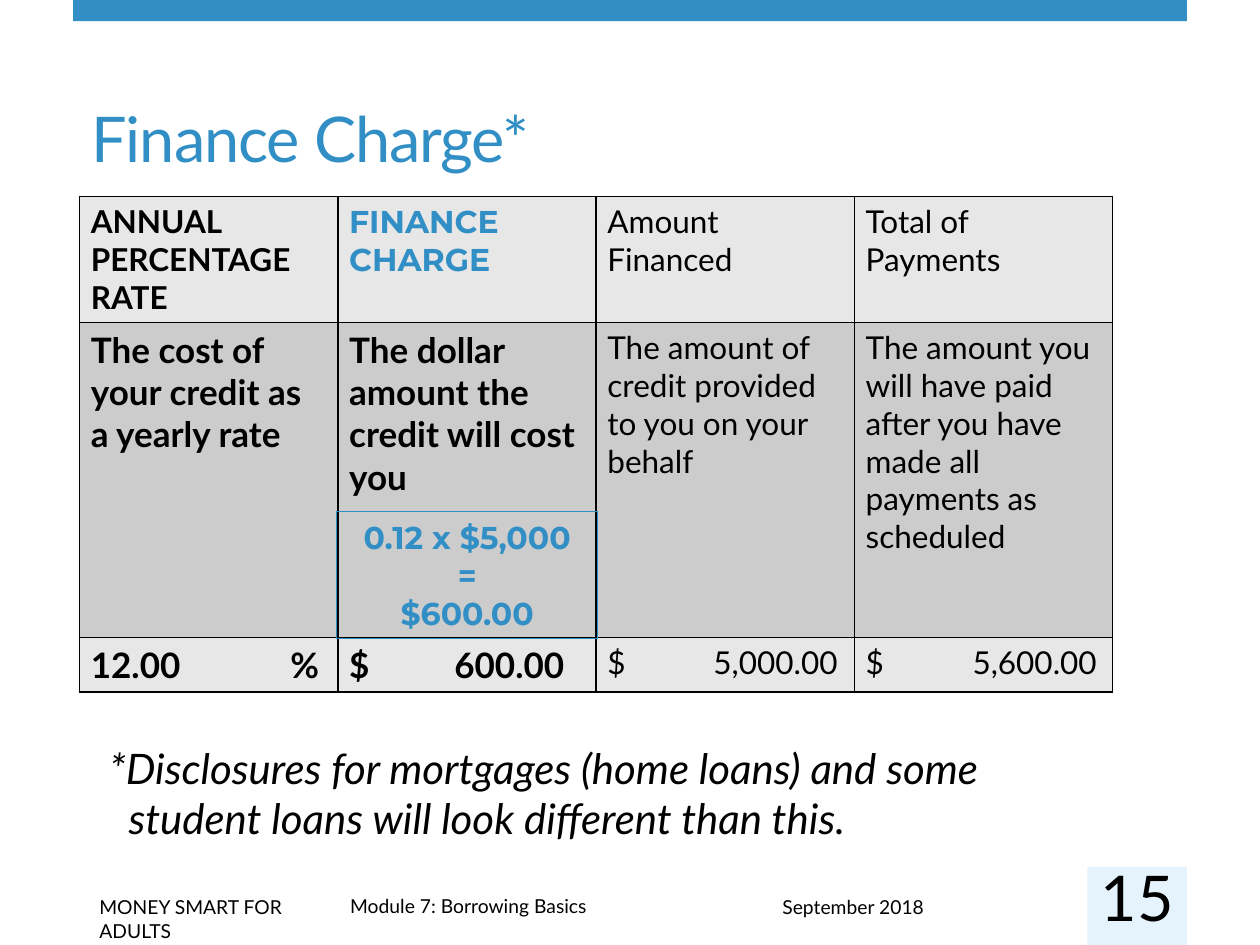
from lxml.etree import SubElement
from pptx import Presentation
from pptx.dml.color import RGBColor
from pptx.enum.shapes import MSO_SHAPE as Shape
from pptx.enum.text import MSO_ANCHOR as Anchor, PP_ALIGN as Align
from pptx.oxml.ns import qn
from pptx.util import Pt

COLORS = {
    "blue": "318FC5",
    "pale_blue": "E4F3FC",
    "black": "000000",
    "light_gray": "E7E7E7",
    "mid_gray": "CCCCCC",
}
BODY, ACCENT = "Lato", "Montserrat"
TITLE_ONLY = 5
COLUMN_WIDTH = 147.6
ROW_HEIGHTS = (72, 180, 31)
ROW_FILLS = ("light_gray", "mid_gray", "light_gray")

PLAIN = {"size": 18}
STRONG = {"size": 20, "bold": True}
HEADING = {"size": 18, "bold": True}
HIGHLIGHT = {"size": 18, "bold": True, "face": ACCENT, "color": "blue"}

DISCLOSURE = (
    (
        (["ANNUAL", "PERCENTAGE RATE"], HEADING),
        (["FINANCE\nCHARGE"], HIGHLIGHT),
        (["Amount\nFinanced"], PLAIN),
        (["Total of\nPayments"], PLAIN),
    ),
    (
        (["The cost of your credit as a yearly rate"], STRONG),
        (["The dollar amount the credit will cost you"], STRONG),
        (["The amount of credit provided to you on your behalf"], PLAIN),
        (["The amount you will have paid after you have made all payments as scheduled"], PLAIN),
    ),
    (
        (["12.00\t%"], STRONG),
        (["$\t600.00"], STRONG),
        (["$\t5,000.00"], PLAIN),
        (["$\t5,600.00"], PLAIN),
    ),
)
AMOUNT_TABS = (130.5, 123, 131.5, 132)

FOOTERS = (
    ("Module 7: Borrowing Basics", 193, 507.6, 407.5),
    ("MONEY SMART FOR ADULTS", 49.7, 508.3, 150.5),
    ("September 2018", 440, 508.3, 181.4),
)


def rgb(name):
    return RGBColor.from_string(COLORS[name])


def write(paragraph, text, size, bold=False, italic=False, face=BODY, color="black"):
    for index, line in enumerate(text.split("\n")):
        if index:
            paragraph.add_line_break()
        run = paragraph.add_run()
        run.text = line
        run.font.size = Pt(size)
        run.font.bold = bold
        run.font.italic = italic
        run.font.name = face
        run.font.color.rgb = rgb(color)


def add_text(slide, text, left, top, width, height, **style):
    box = slide.shapes.add_textbox(Pt(left), Pt(top), Pt(width), Pt(height))
    box.text_frame.word_wrap = True
    write(box.text_frame.paragraphs[0], text, **style)
    return box.text_frame


def add_rectangle(slide, left, top, width, height, fill=None, line=None):
    rectangle = slide.shapes.add_shape(
        Shape.RECTANGLE, Pt(left), Pt(top), Pt(width), Pt(height))
    rectangle.shadow.inherit = False
    if fill:
        rectangle.fill.solid()
        rectangle.fill.fore_color.rgb = rgb(fill)
    else:
        rectangle.fill.background()
    if line:
        rectangle.line.color.rgb = rgb(line)
        rectangle.line.width = Pt(0.75)
    else:
        rectangle.line.fill.background()
    return rectangle


def add_title(slide, text):
    title = slide.shapes.title
    title.left, title.top, title.width, title.height = Pt(45), Pt(34.6), Pt(590.4), Pt(69)
    title.text_frame.vertical_anchor = Anchor.BOTTOM
    paragraph = title.text_frame.paragraphs[0]
    paragraph.alignment = Align.LEFT
    write(paragraph, text, size=36, color="blue")
    paragraph.runs[0].font._element.set("spc", "-60")


def add_right_tab(paragraph, position):
    tabs = SubElement(paragraph._p.get_or_add_pPr(), qn("a:tabLst"))
    SubElement(tabs, qn("a:tab"), pos=str(Pt(position)), algn="r")


def set_borders(cell):
    properties = cell._tc.get_or_add_tcPr()
    for side in ("lnL", "lnR", "lnT", "lnB"):
        border = SubElement(properties, qn(f"a:{side}"), w=str(Pt(1)))
        fill = SubElement(border, qn("a:solidFill"))
        SubElement(fill, qn("a:srgbClr"), val=COLORS["black"])


def fill_cell(cell, paragraphs, style, fill, tab):
    cell.margin_left = cell.margin_right = Pt(6.5)
    cell.margin_top = cell.margin_bottom = Pt(3.6)
    set_borders(cell)
    cell.fill.solid()
    cell.fill.fore_color.rgb = rgb(fill)
    frame = cell.text_frame
    for index, text in enumerate(paragraphs):
        paragraph = frame.add_paragraph() if index else frame.paragraphs[0]
        if "\t" in text:
            add_right_tab(paragraph, tab)
        write(paragraph, text, **style)


def add_disclosure_table(slide):
    columns = len(AMOUNT_TABS)
    table = slide.shapes.add_table(
        len(DISCLOSURE), columns, Pt(45.4), Pt(112.2),
        Pt(COLUMN_WIDTH * columns), Pt(sum(ROW_HEIGHTS))).table
    table.first_row = table.horz_banding = False
    for column in table.columns:
        column.width = Pt(COLUMN_WIDTH)
    for r, row in enumerate(DISCLOSURE):
        table.rows[r].height = Pt(ROW_HEIGHTS[r])
        for c, (paragraphs, style) in enumerate(row):
            fill_cell(table.cell(r, c), paragraphs, style, ROW_FILLS[r], AMOUNT_TABS[c])


def add_calculation(slide):
    calculation = add_rectangle(slide, 192.5, 292.3, 149, 72.7, line="blue")
    calculation.text_frame.word_wrap = True
    paragraph = calculation.text_frame.paragraphs[0]
    paragraph.alignment = Align.CENTER
    write(paragraph, "0.12 x $5,000\n=\n$600.00", **HIGHLIGHT)


def add_note(slide):
    note = add_text(
        slide,
        "*Disclosures for mortgages (home loans) and some\n"
        "student loans will look different than this.",
        55.4, 420.5, 587.5, 65.5, size=24, italic=True)
    properties = note.paragraphs[0]._p.get_or_add_pPr()
    properties.set("marL", str(Pt(11)))
    properties.set("indent", str(Pt(-11)))


def add_page_number(slide, number):
    add_rectangle(slide, 621.4, 495.4, 56.9, 44.6, fill="pale_blue")
    frame = add_text(slide, number, 621.4, 501, 56.9, 22.3, size=36)
    frame.margin_left = frame.margin_right = frame.margin_top = frame.margin_bottom = 0
    frame.vertical_anchor = Anchor.MIDDLE
    frame.paragraphs[0].alignment = Align.CENTER


def main():
    deck = Presentation()
    deck.slide_width, deck.slide_height = Pt(720), Pt(540)
    slide = deck.slides.add_slide(deck.slide_layouts[TITLE_ONLY])
    add_rectangle(slide, 41.8, 0, 636.5, 12.2, fill="blue")
    for text, left, top, width in FOOTERS:
        add_text(slide, text, left, top, width, 20.6, size=11)
    add_title(slide, "Finance Charge*")
    add_disclosure_table(slide)
    add_calculation(slide)
    add_note(slide)
    add_page_number(slide, "15")
    deck.save("out.pptx")


if __name__ == "__main__":
    main()
